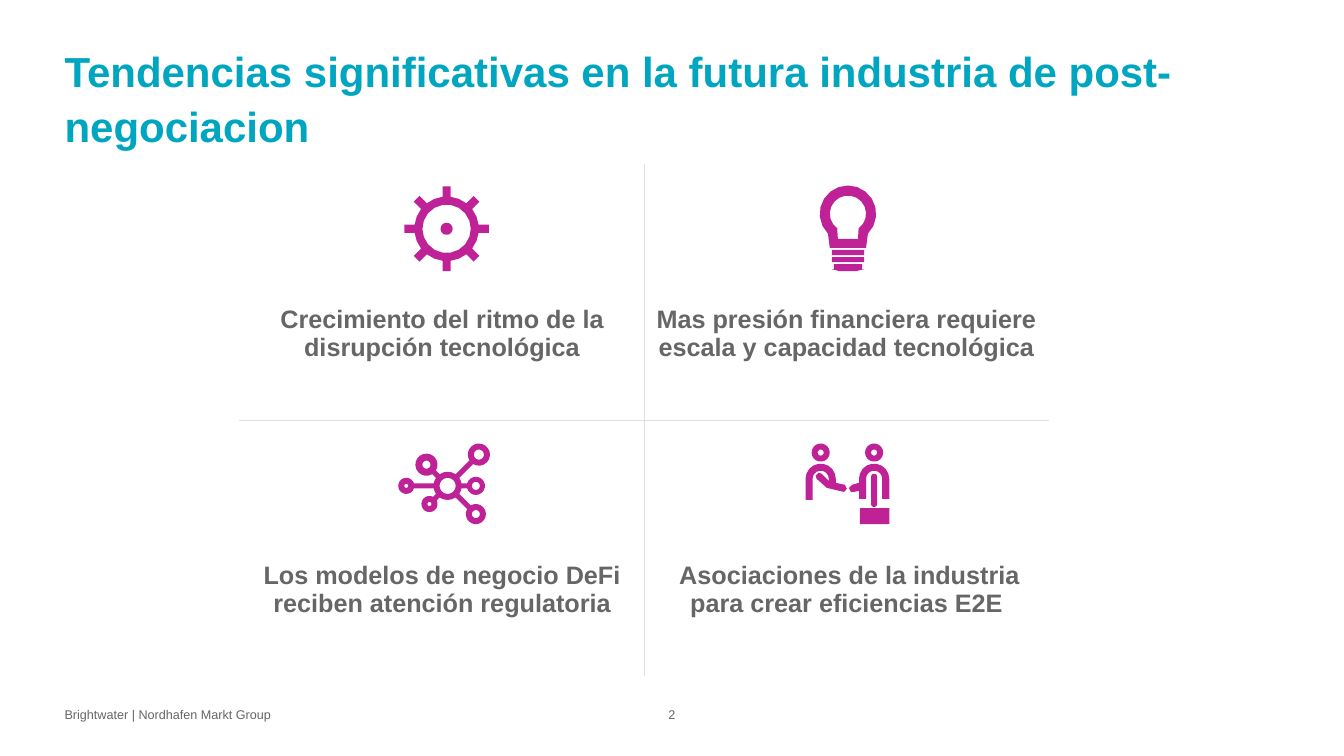
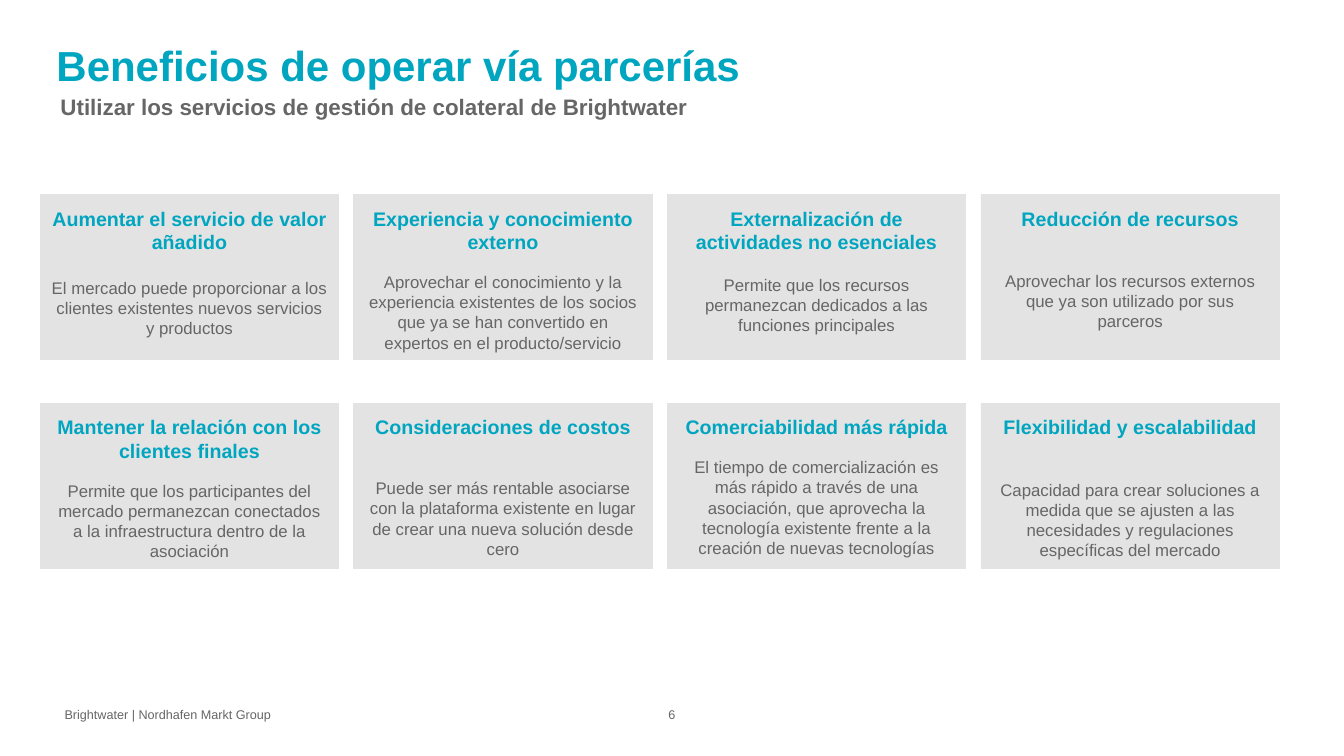
from dataclasses import dataclass
from math import asin, atan2, ceil, cos, degrees, hypot, radians, sin

from lxml import etree
from pptx import Presentation
from pptx.dml.color import RGBColor
from pptx.enum.shapes import MSO_SHAPE
from pptx.enum.text import MSO_ANCHOR, MSO_AUTO_SIZE, PP_ALIGN
from pptx.oxml.ns import qn
from pptx.util import Emu, Pt

LEFT, CENTER = PP_ALIGN.LEFT, PP_ALIGN.CENTER
TOP = MSO_ANCHOR.TOP
NO_FIT = MSO_AUTO_SIZE.NONE
RECT = MSO_SHAPE.RECTANGLE
SCALE = 9144  # 100 px to the inch


@dataclass(frozen=True)
class Theme:
    font: str = "Arial"
    teal: str = "00A5C0"
    gray: str = "666666"
    pink: str = "BF2296"
    rule: str = "E0E0E0"
    card: str = "E3E3E3"
    white: str = "FFFFFF"
    title: int = 30
    topic: int = 18
    sub: int = 16
    head: int = 14
    body: int = 12
    foot: int = 9


THEME = Theme()
FOOTER = "Brightwater | Nordhafen Markt Group"

TOPICS = [
    ["Crecimiento del ritmo de la disrupción tecnológica",
     "Mas presión financiera requiere escala y capacidad tecnológica"],
    ["Los modelos de negocio DeFi reciben atención regulatoria",
     " Asociaciones de la industria para crear eficiencias E2E"],
]

# Heading, gap in points, body
CARDS = [
    ("Aumentar el servicio de valor añadido", 17,
     "El mercado puede proporcionar a los clientes existentes nuevos "
     "servicios y productos"),
    ("Experiencia y conocimiento externo", 13,
     "Aprovechar el conocimiento y la experiencia existentes de los socios "
     "que ya se han convertido en expertos en el producto/servicio"),
    ("Externalización de actividades no esenciales", 15,
     "Permite que los recursos permanezcan dedicados a las funciones "
     "principales"),
    ("Reducción de recursos", 29,
     "Aprovechar los recursos externos que ya son utilizado por sus parceros"),
    ("Mantener la relación con los clientes finales", 13,
     "Permite que los participantes del mercado permanezcan conectados a la "
     "infraestructura dentro de la asociación"),
    ("Consideraciones de costos", 28,
     "Puede ser más rentable asociarse con la plataforma existente en lugar "
     "de crear una nueva solución desde cero"),
    ("Comerciabilidad más rápida", 13,
     "El tiempo de comercialización es más rápido a través de una "
     "asociación, que aprovecha la tecnología existente frente a la creación "
     "de nuevas tecnologías"),
    ("Flexibilidad y escalabilidad", 29,
     "Capacidad para crear soluciones a medida que se ajusten a las "
     "necesidades y regulaciones específicas del mercado"),
]


def px(*vals):
    return [Emu(round(v * SCALE)) for v in vals]


def rgb(code):
    return RGBColor.from_string(code)


# Text helpers
def style(par, size, color, bold=False, align=LEFT, space=1.0, after=0):
    par.alignment = align
    par.line_spacing = space
    par.space_before, par.space_after = Pt(0), Pt(after)
    for run in par.runs:
        font = run.font
        font.name, font.size, font.bold = THEME.font, Pt(size), bold
        font.color.rgb = rgb(color)


def frame(shape, ins):
    tf = shape.text_frame
    tf.word_wrap, tf.auto_size, tf.vertical_anchor = True, NO_FIT, TOP
    (tf.margin_left, tf.margin_top,
     tf.margin_right, tf.margin_bottom) = px(*ins)
    return tf


def place(shape, box):
    shape.left, shape.top, shape.width, shape.height = px(*box)


def paint(shape, color):
    shape.shadow.inherit = False
    shape.fill.solid()
    shape.fill.fore_color.rgb = rgb(color)
    shape.line.fill.background()


def panel(slide, box, color):
    shape = slide.shapes.add_shape(RECT, *px(*box))
    paint(shape, color)
    shape.line.color.rgb = rgb(color)
    shape.line.width = Pt(0.5)
    return shape


# Parts shared by the slides
def title(slide, box, text):
    shape = slide.shapes.title
    place(shape, box)
    tf = frame(shape, (0, 0, 0, 0))
    tf.text = text
    style(tf.paragraphs[0], THEME.title, THEME.teal, True, space=1.1)


def footer(slide, page):
    parts = [((64, 698, 272, 24), 0, LEFT, FOOTER),
             ((635, 698, 63, 24), 10, CENTER, page)]
    for box, inset, align, text in parts:
        tf = frame(slide.shapes.add_textbox(*px(*box)), (inset, 5, 10, 5))
        tf.text = text
        style(tf.paragraphs[0], THEME.foot, THEME.gray, align=align, space=0.9)
    panel(slide, (635, 721, 63, 24), THEME.white)


# Outline helpers for icons
def arc(x, y, r, start, end):
    steps = ceil(abs(end - start) / 20)
    turns = [radians(start + (end - start) * i / steps)
             for i in range(steps + 1)]
    return [(x + r * cos(t), y + r * sin(t)) for t in turns]


def disc(x, y, r):
    return arc(x, y, r, 0, 360)


def rect(x, y, w, h):
    return [(x, y), (x + w, y), (x + w, y + h), (x, y + h)]


def star(x, y, r, arms, width):
    """Disc with arms: each has an angle, a reach and the radius of its end."""
    half = width / 2
    side = degrees(asin(half / r))
    pts = []
    for i, (turn, reach, tip) in enumerate(arms):
        dx, dy = cos(radians(turn)), sin(radians(turn))
        end = x + reach * dx, y + reach * dy
        if tip:
            bend = degrees(asin(half / tip))
            pts += arc(*end, tip, turn + 180 + bend, turn + 540 - bend)
        else:
            pts += [(end[0] - s * dy, end[1] + s * dx) for s in (-half, half)]
        after = arms[i + 1][0] if i + 1 < len(arms) else arms[0][0] + 360
        pts += arc(x, y, r, turn + side, after - side)
    return pts


def icon(slide, x, y, paths):
    pts = [[px(x + a, y + b) for a, b in path] for path in paths]
    form = slide.shapes.build_freeform(*pts[0][0], scale=1.0)
    form.add_line_segments(pts[0][1:])
    for path in pts[1:]:
        form.move_to(*path[0])
        form.add_line_segments(path[1:])
    paint(form.convert_to_shape(), THEME.pink)


# Icon outlines
def gear():
    teeth = [(turn, 42, 0) for turn in range(0, 360, 45)]
    return [star(42, 43, 32, teeth, 8), disc(42, 43, 24), disc(42, 43, 6)]


def bulb():
    return [
        arc(28, 28, 28, 135, 405) + [(46, 62), (10, 62)],
        arc(28, 28, 18, 126, 414) + [(38, 53), (18, 53)],
        rect(12, 64, 32, 5), rect(12, 71, 32, 5),
        [(14, 78), (42, 78), (42, 83), (44, 83), (36, 85),
         (20, 85), (12, 83), (14, 83)],
    ]


def network():
    x, y = 49, 42
    nodes = [(8, 42, 8, 2), (28, 21, 11, 4), (80, 11, 11, 5),
             (77, 42, 9, 4), (77, 70, 10, 4), (31, 60, 8, 2)]
    arms = sorted((degrees(atan2(b - y, a - x)) % 360,
                   hypot(a - x, b - y), big) for a, b, big, _ in nodes)
    holes = [disc(a, b, hole) for a, b, _, hole in nodes]
    return [star(x, y, 14, arms, 5), disc(x, y, 8)] + holes


def people():
    heads = [disc(x, 9, r) for x in (15, 68) for r in (9, 3)]
    guest = ([(0, 56)] + arc(15, 35, 15, 180, 360)
             + [(30, 39), (39, 41), (41, 45), (38, 48), (21, 44), (11, 35),
                (10, 32), (13, 29), (16, 30), (23, 37)]
             + arc(15, 35, 8, 360, 180) + [(7, 56)])
    host = ([(53, 39), (46, 41), (43, 44), (45, 48), (48, 48), (53, 47),
             (53, 55), (60, 55)]
            + arc(68, 35, 8, 180, 360) + [(76, 55), (83, 55)]
            + arc(68, 35, 15, 360, 180))
    tie = arc(68, 33, 3, 180, 360) + arc(68, 60, 3, 0, 180)
    return heads + [guest, host, tie, rect(54, 64, 29, 16)]


# Table of topics
def border(cell, sides):
    props = cell._tc.get_or_add_tcPr()
    for side in sides:
        line = etree.SubElement(props, qn("a:ln" + side), w="12700")
        fill = etree.SubElement(line, qn("a:solidFill"))
        etree.SubElement(fill, qn("a:srgbClr"), val=THEME.rule)


def matrix(slide, box):
    table = slide.shapes.add_table(2, 2, *px(*box)).table
    table.first_row = table.horz_banding = False
    for r, row in enumerate(TOPICS):
        for c, text in enumerate(row):
            cell = table.cell(r, c)
            border(cell, "RL"[c] + "BT"[r])
            cell.fill.background()
            cell.margin_top = px(140)[0]
            cell.text = text
            style(cell.text_frame.paragraphs[0], THEME.topic, THEME.gray,
                  True, CENTER, after=6)


# Grid of cards
def card(slide, box, head, gap, body):
    tf = frame(panel(slide, box, THEME.card), (11, 12, 11, 12))
    tf.text = head
    style(tf.paragraphs[0], THEME.head, THEME.teal, True, CENTER)
    par = tf.add_paragraph()
    par.text = body
    style(par, THEME.body, THEME.gray, False, CENTER)
    par.space_before = Pt(gap)


def grid(slide, x, y):
    for i, item in enumerate(CARDS):
        row, col = divmod(i, 4)
        card(slide, (x + col * 311, y + row * 207, 296, 164), *item)


def subtitle(slide, box, text):
    shape = slide.placeholders[1]
    place(shape, box)
    tf = frame(shape, (0, 0, 0, 0))
    tf.text = text
    par = tf.paragraphs[0]
    props = par._p.get_or_add_pPr()
    props.set("marL", "0")
    props.set("indent", "0")
    etree.SubElement(props, qn("a:buNone"))
    style(par, THEME.sub, THEME.gray, True, after=6)


# Slides
def trends(deck):
    slide = deck.slides.add_slide(deck.slide_layouts[5])
    title(slide, (64, 40, 1205, 102),
          "Tendencias significativas en la futura industria de "
          "post-negociacion")
    matrix(slide, (238, 163, 802, 508))
    for x, y, paths in ((395, 440, network()), (401, 184, gear()),
                        (799, 440, people()), (813, 184, bulb())):
        icon(slide, x, y, paths)
    footer(slide, "2")


def gains(deck):
    slide = deck.slides.add_slide(deck.slide_layouts[1])
    title(slide, (56, 34, 1205, 102), "Beneficios de operar vía parcerías")
    subtitle(slide, (60, 92, 899, 75),
             "Utilizar los servicios de gestión de colateral de Brightwater")
    grid(slide, 40, 193)
    footer(slide, "6")


def main():
    deck = Presentation()
    deck.slide_width, deck.slide_height = px(1333, 750)
    trends(deck)
    gains(deck)
    deck.save("out.pptx")


if __name__ == "__main__":
    main()
